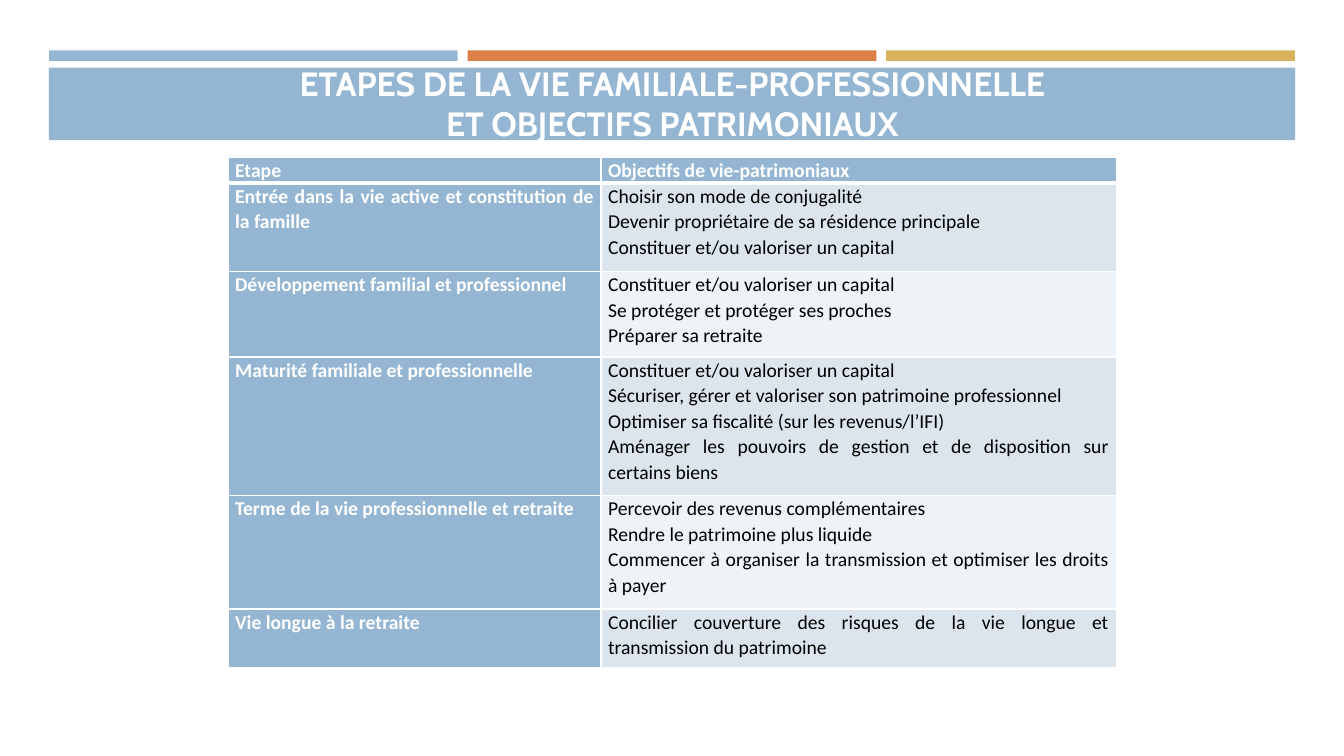
from pptx import Presentation
from pptx.dml.color import RGBColor
from pptx.enum.shapes import MSO_SHAPE
from pptx.enum.text import MSO_ANCHOR, MSO_AUTO_SIZE, PP_ALIGN
from pptx.oxml import parse_xml
from pptx.oxml.ns import nsdecls
from pptx.util import Inches, Pt

RECTANGLE = MSO_SHAPE.RECTANGLE
BOTTOM = MSO_ANCHOR.BOTTOM
NO_AUTOFIT = MSO_AUTO_SIZE.NONE
CENTER, JUSTIFY, LEFT = PP_ALIGN.CENTER, PP_ALIGN.JUSTIFY, PP_ALIGN.LEFT

BLUE = RGBColor(0x94, 0xB6, 0xD2)
ORANGE = RGBColor(0xDD, 0x80, 0x47)
GOLD = RGBColor(0xD8, 0xB2, 0x5C)
BAND_DARK = RGBColor(0xDC, 0xE5, 0xEE)
BAND_LIGHT = RGBColor(0xEE, 0xF3, 0xF7)
WHITE = RGBColor(0xFF, 0xFF, 0xFF)
BLACK = RGBColor(0x00, 0x00, 0x00)

TITLE = "ETAPES DE LA VIE FAMILIALE-PROFESSIONNELLE\vET OBJECTIFS PATRIMONIAUX"
HEADER = ("Etape", ["Objectifs de vie-patrimoniaux"])
STAGES = [
    ("Entrée dans la vie active et constitution de la famille", [
        "Choisir son mode de conjugalité",
        "Devenir propriétaire de sa résidence principale",
        "Constituer et/ou valoriser un capital"]),
    ("Développement familial et professionnel", [
        "Constituer et/ou valoriser un capital",
        "Se protéger et protéger ses proches",
        "Préparer sa retraite"]),
    ("Maturité familiale et professionnelle", [
        "Constituer et/ou valoriser un capital",
        "Sécuriser, gérer et valoriser son patrimoine professionnel",
        "Optimiser sa fiscalité (sur les revenus/l’IFI)",
        "Aménager les pouvoirs de gestion et de disposition sur certains biens"]),
    ("Terme de la vie professionnelle et retraite", [
        "Percevoir des revenus complémentaires",
        "Rendre le patrimoine plus liquide",
        "Commencer à organiser la transmission et optimiser les droits à payer"]),
    ("Vie longue à la retraite", [
        "Concilier couverture des risques de la vie longue et "
        "transmission du patrimoine"]),
]
COLUMN_WIDTHS = [27.75, 38.33]
ROW_HEIGHTS = [3.33, 11.73, 11.33, 18.27, 15.07, 7.73]


class SlideBuilder:
    """Draws styled elements on a slide divided into 100 columns and 100 rows."""

    title_font, title_size = "Cabin", 24
    table_font, table_size = "Calibri", 14
    line_spacing = 1.07
    side_margin = Inches(0.07)

    def __init__(self, presentation):
        self.column = presentation.slide_width / 100
        self.row = presentation.slide_height / 100
        self.slide = presentation.slides.add_slide(presentation.slide_layouts[5])

    def area(self, left, top, width, height):
        return (round(left * self.column), round(top * self.row),
                round(width * self.column), round(height * self.row))

    def bar(self, left, top, width, height, color):
        shape = self.slide.shapes.add_shape(
            RECTANGLE, *self.area(left, top, width, height))
        shape.shadow.inherit = False
        shape.fill.solid()
        shape.fill.fore_color.rgb = color
        shape.line.fill.background()

    def title(self, text, left, top, width, height):
        shape = self.slide.shapes.title
        shape.left, shape.top, shape.width, shape.height = self.area(
            left, top, width, height)
        frame = shape.text_frame
        frame.text = text
        frame.word_wrap = True
        frame.auto_size = NO_AUTOFIT
        frame.vertical_anchor = BOTTOM
        paragraph = frame.paragraphs[0]
        paragraph.alignment = CENTER
        self.font(paragraph, self.title_font, self.title_size, WHITE, True)
        tree = self.slide.shapes._spTree
        tree.append(shape._element)

    def font(self, paragraph, name, size, color, bold):
        paragraph.font.name = name
        paragraph.font.size = Pt(size)
        paragraph.font.color.rgb = color
        paragraph.font.bold = bold

    def table(self, left, top, widths, heights):
        frame = self.slide.shapes.add_table(
            len(heights), len(widths),
            *self.area(left, top, sum(widths), sum(heights)))
        table = frame.table
        for column, width in zip(table.columns, widths):
            column.width = round(width * self.column)
        for row, height in zip(table.rows, heights):
            row.height = round(height * self.row)
        return table

    def cell(self, cell, lines, fill, color, bold, alignment=JUSTIFY, top=1, bottom=1):
        cell.margin_left = cell.margin_right = self.side_margin
        cell.margin_top = cell.margin_bottom = 0
        for side, points in zip("LRTB", (1, 1, top, bottom)):
            cell._tc.get_or_add_tcPr().append(parse_xml(
                f'<a:ln{side} {nsdecls("a")} w="{Pt(points)}"><a:solidFill>'
                f'<a:srgbClr val="{WHITE}"/></a:solidFill></a:ln{side}>'))
        cell.fill.solid()
        cell.fill.fore_color.rgb = fill
        cell.text_frame.text = "\n".join(lines)
        for paragraph in cell.text_frame.paragraphs:
            paragraph.alignment = alignment
            paragraph.line_spacing = self.line_spacing
            self.font(paragraph, self.table_font, self.table_size, color, bold)


def main():
    presentation = Presentation()
    presentation.slide_width, presentation.slide_height = Inches(13.33), Inches(7.5)
    builder = SlideBuilder(presentation)

    for index, color in enumerate((BLUE, ORANGE, GOLD)):
        builder.bar(3.66 + index * 31.14, 6.67, 30.4, 1.4, color)
    builder.bar(3.64, 8.95, 92.72, 9.6, BLUE)
    builder.title(TITLE, 4.8, 8, 90.45, 11.6)

    table = builder.table(16.97, 20.8, COLUMN_WIDTHS, ROW_HEIGHTS)
    for index, (stage, goals) in enumerate([HEADER] + STAGES):
        is_header = index == 0
        edges = {"top": 3 if index == 1 else 1, "bottom": 3 if is_header else 1}
        band = BAND_DARK if index % 2 else BAND_LIGHT
        builder.cell(table.cell(index, 0), [stage], BLUE, WHITE, True,
                     LEFT if index == 2 else JUSTIFY, **edges)
        builder.cell(table.cell(index, 1), goals, BLUE if is_header else band,
                     WHITE if is_header else BLACK, is_header, **edges)

    presentation.save("out.pptx")


if __name__ == "__main__":
    main()
